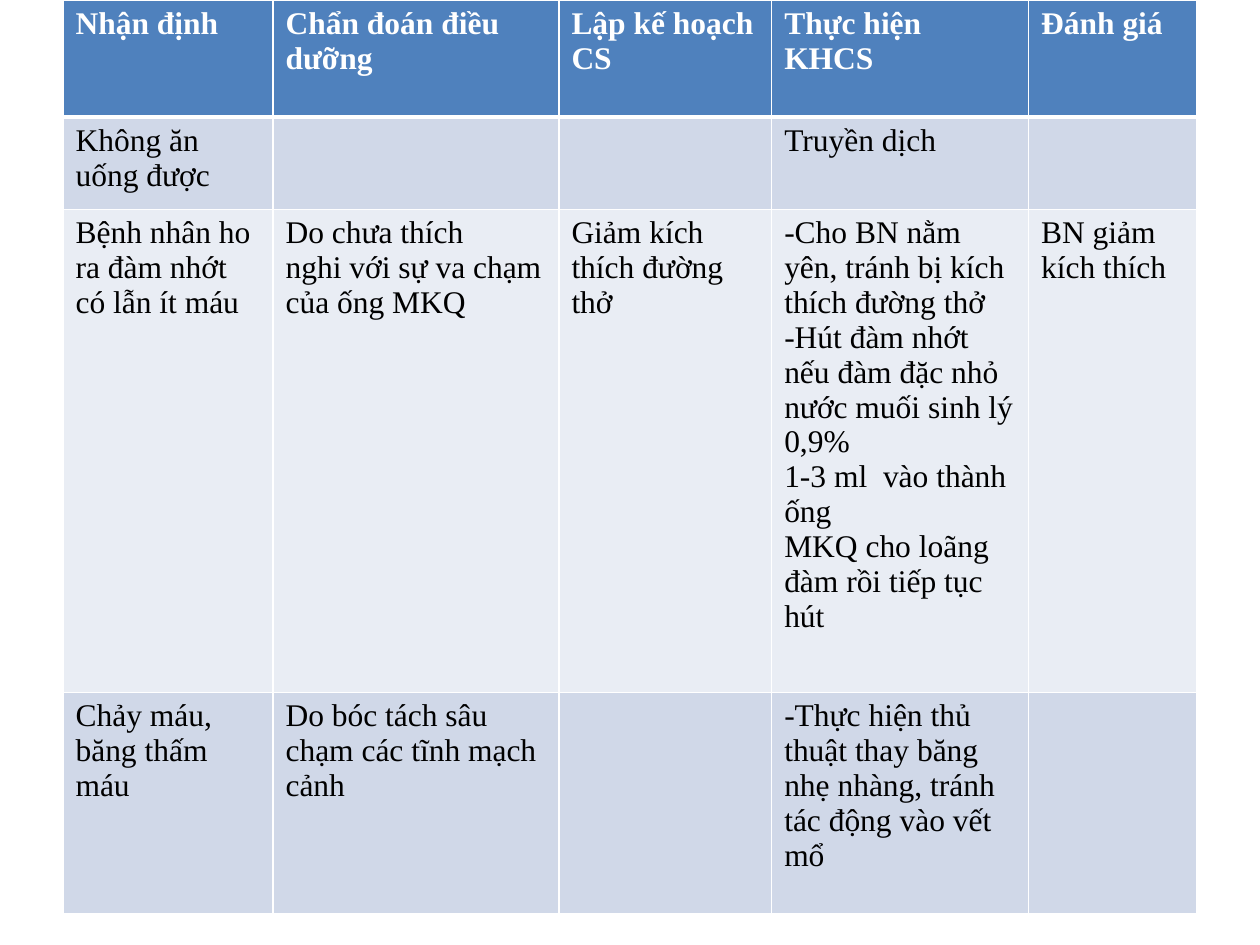
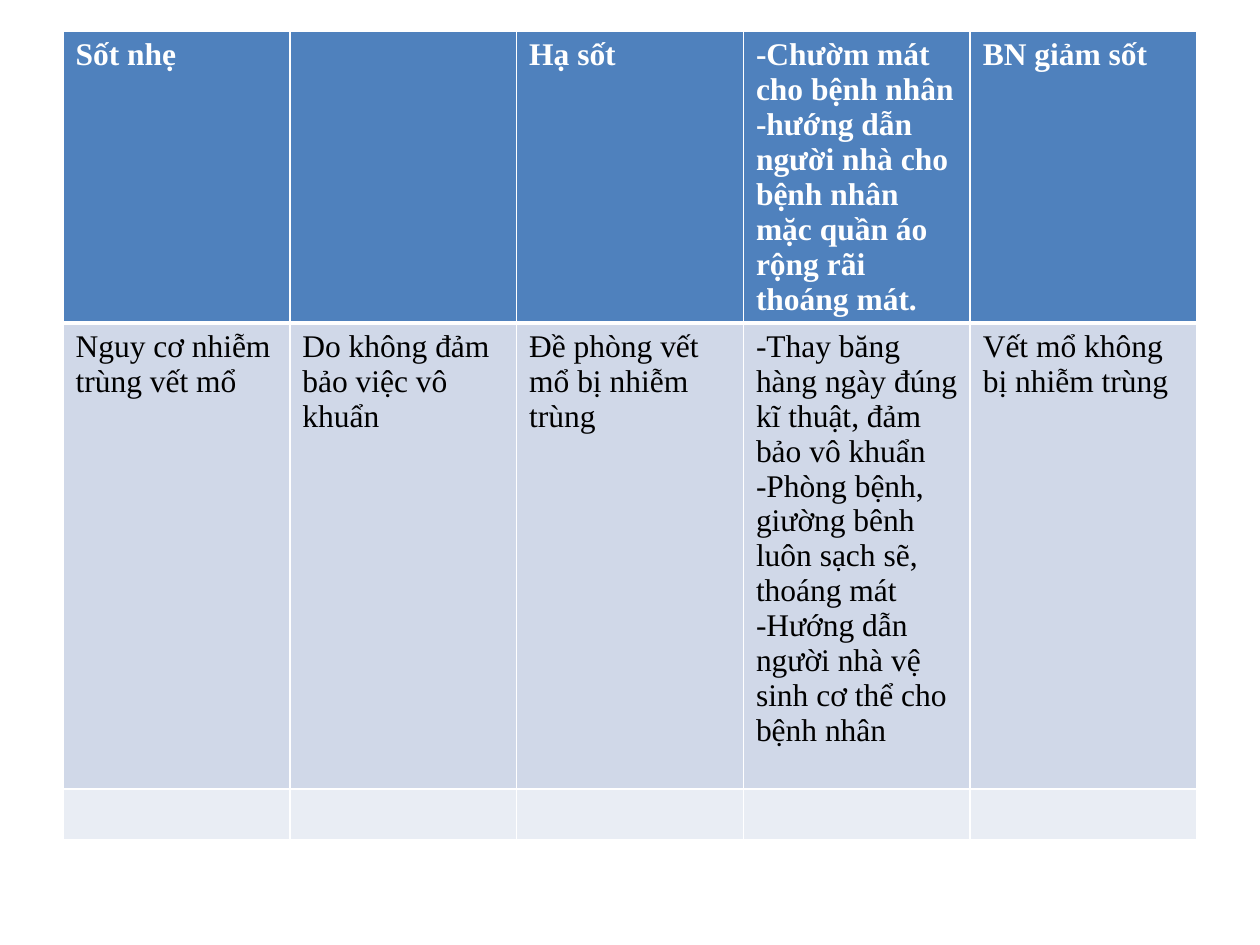
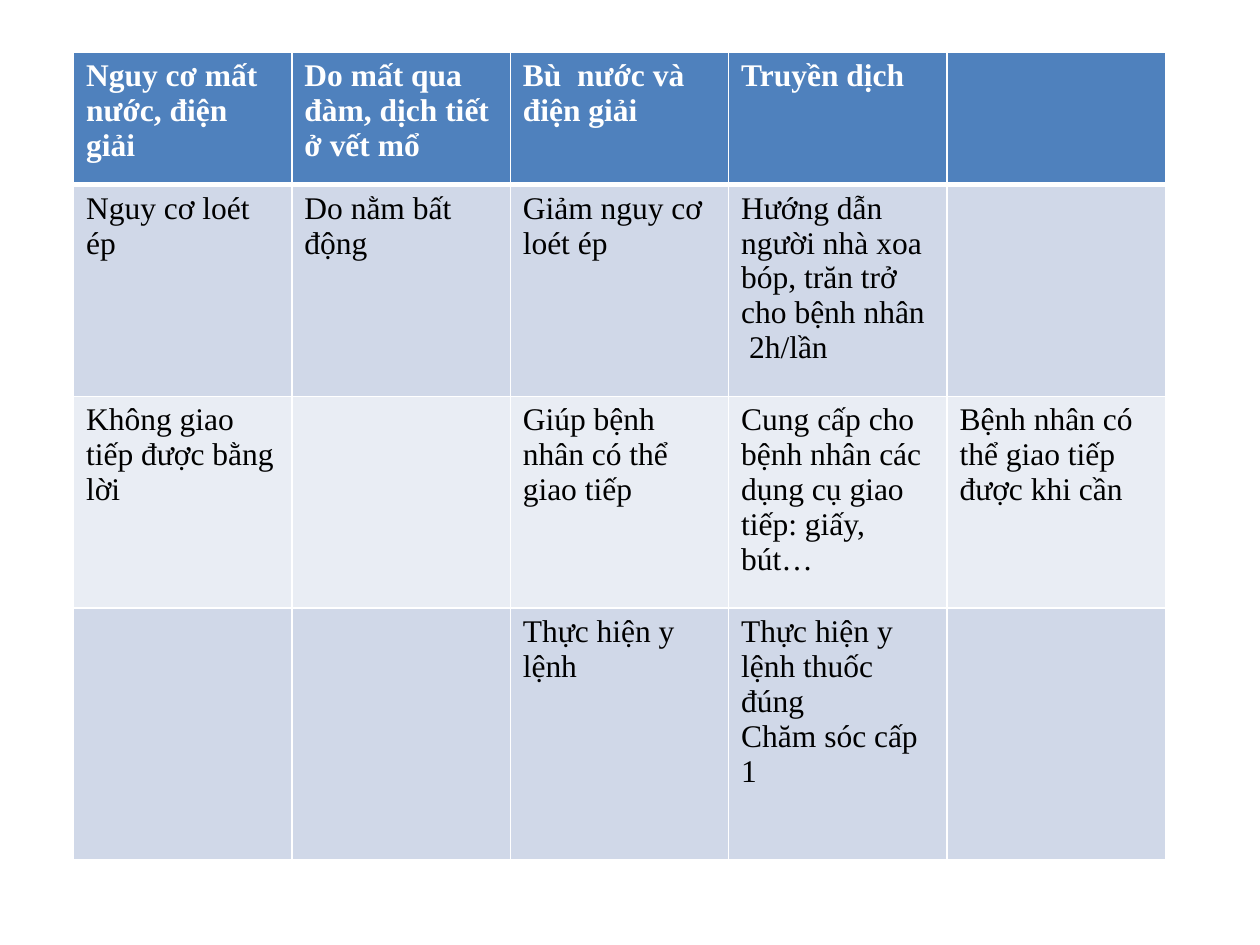
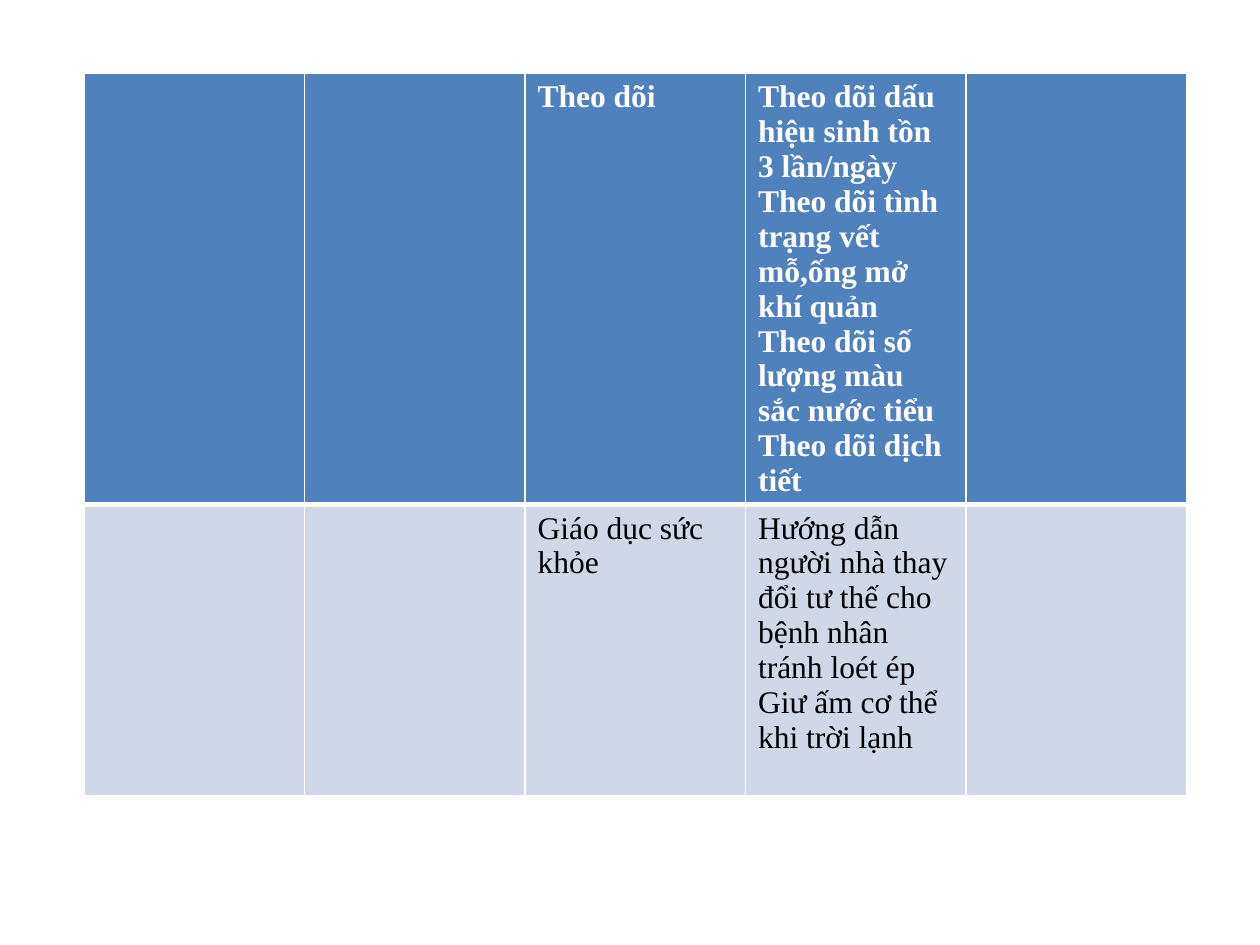
import pptx
import pptx.util
import pptx.dml.color
import pptx.oxml
import pptx.oxml.ns

Pt = pptx.util.Pt
FONT = "Times New Roman"
HUES = {
    "head": "4F81BD",
    "odd": "D0D8E8",
    "even": "E9EDF4",
    "line": "FFFFFF",
    "light": "FFFFFF",
    "dark": "000000",
}

PLANS = [
    {
        "box": (36, 0, 648, 522.4),
        "cols": [120, 163.4, 121.6, 146.8, 96.2],
        "rows": [66.9, 52.7, 276, 126.8],
        "texts": [
            ["Nhận định", "Chẩn đoán điều dưỡng", "Lập kế hoạch CS",
             "Thực hiện KHCS", "Đánh giá"],
            ["Không ăn uống được", "", "", "Truyền dịch", ""],
            ["Bệnh nhân ho ra đàm nhớt có lẫn ít máu",
             "Do chưa thích\nnghi với sự va chạm của ống MKQ",
             "Giảm kích thích đường thở",
             "-Cho BN nằm yên, tránh bị kích thích đường thở\n"
             "-Hút đàm nhớt nếu đàm đặc nhỏ nước muối sinh lý 0,9%\n"
             "1-3 ml  vào thành ống\n"
             "MKQ cho loãng đàm rồi tiếp tục hút",
             "BN giảm kích thích"],
            ["Chảy máu, băng thấm\nmáu",
             "Do bóc tách sâu\nchạm các tĩnh mạch cảnh", "",
             "-Thực hiện thủ thuật thay băng nhẹ nhàng, tránh tác động vào vết mổ",
             ""],
        ],
    },
    {
        "box": (36, 18, 648, 461.2),
        "rows": [166.3, 266.3, 28.6],
        "texts": [
            ["Sốt nhẹ", "", "Hạ sốt",
             "-Chườm mát cho bệnh nhân\n"
             "-hướng dẫn người nhà cho bệnh nhân mặc quần áo rộng rãi thoáng mát.",
             "BN giảm sốt"],
            ["Nguy cơ nhiễm trùng vết mổ", "Do không đảm bảo việc vô khuẩn",
             "Đề phòng vết mổ bị nhiễm trùng",
             "-Thay băng hàng ngày đúng kĩ thuật, đảm bảo vô khuẩn\n"
             "-Phòng bệnh, giường bênh luôn sạch sẽ, thoáng mát\n"
             "-Hướng dẫn người nhà vệ sinh cơ thể cho bệnh nhân",
             "Vết mổ không bị nhiễm trùng"],
            [""] * 5,
        ],
    },
    {
        "box": (42, 30, 624, 461.6),
        "rows": [75.6, 121, 121, 144],
        "texts": [
            ["Nguy cơ mất nước, điện giải", "Do mất qua đàm, dịch tiết ở vết mổ",
             "Bù  nước và điện giải", "Truyền dịch", ""],
            ["Nguy cơ loét ép", "Do nằm bất động", "Giảm nguy cơ loét ép",
             "Hướng dẫn người nhà xoa bóp, trăn trở cho bệnh nhân\n 2h/lần", ""],
            ["Không giao tiếp được bằng lời", "",
             "Giúp bệnh nhân có thể giao tiếp",
             "Cung cấp cho bệnh nhân các dụng cụ giao tiếp: giấy, bút…",
             "Bệnh nhân có thể giao tiếp được khi cần"],
            ["", "", "Thực hiện y lệnh",
             "Thực hiện y lệnh thuốc đúng\nChăm sóc cấp 1", ""],
        ],
    },
    {
        "box": (48, 42, 630, 412.6),
        "rows": [246, 166.6],
        "texts": [
            ["", "", "Theo dõi",
             "Theo dõi dấu hiệu sinh tồn 3 lần/ngày\n"
             "Theo dõi tình trạng vết mỗ,ống mở khí quản\n"
             "Theo dõi số lượng màu sắc nước tiểu\n"
             "Theo dõi dịch tiết", ""],
            ["", "", "Giáo dục sức khỏe",
             "Hướng dẫn người nhà thay đổi tư thế cho bệnh nhân tránh loét ép\n"
             "Giư ấm cơ thể khi trời lạnh", ""],
        ],
    },
]


def tint(name):
    return pptx.dml.color.RGBColor.from_string(HUES[name])


def write(frame, text, size=18, bold=False, hue="dark"):
    frame.text = text
    for para in frame.paragraphs:
        for run in para.runs:
            run.font.name = FONT
            run.font.size = Pt(size)
            run.font.bold = bold
            run.font.color.rgb = tint(hue)


def edge(cell, side, width):
    line = pptx.oxml.parse_xml(
        f'<a:ln{side} {pptx.oxml.ns.nsdecls("a")} w="{Pt(width)}">'
        f'<a:solidFill><a:srgbClr val="{HUES["line"]}"/></a:solidFill>'
        f'</a:ln{side}>'
    )
    cell._tc.get_or_add_tcPr().append(line)


def style(cell, row):
    thick = {"T": row == 1, "B": row == 0}
    for side in "LRTB":
        edge(cell, side, 3 if thick.get(side) else 1)
    cell.fill.solid()
    band = "odd" if row % 2 else "even"
    cell.fill.fore_color.rgb = tint(band if row else "head")


def add_grid(slide, box, rows, texts, cols=None):
    count = len(texts[0])
    cols = cols or [box[2] / count] * count
    frame = slide.shapes.add_table(len(rows), count, *map(Pt, box))
    table = frame.table
    table.horz_banding = False
    for col, width in zip(table.columns, cols):
        col.width = Pt(width)
    for row, height in zip(table.rows, rows):
        row.height = Pt(height)
    for r, line in enumerate(texts):
        for c, text in enumerate(line):
            cell = table.cell(r, c)
            style(cell, r)
            if text:
                write(cell.text_frame, text, bold=r == 0,
                      hue="dark" if r else "light")


def main():
    deck = pptx.Presentation()
    deck.slide_width = Pt(720)
    deck.slide_height = Pt(540)
    for plan in PLANS:
        add_grid(deck.slides.add_slide(deck.slide_layouts[6]), **plan)
    deck.save("out.pptx")


if __name__ == "__main__":
    main()
